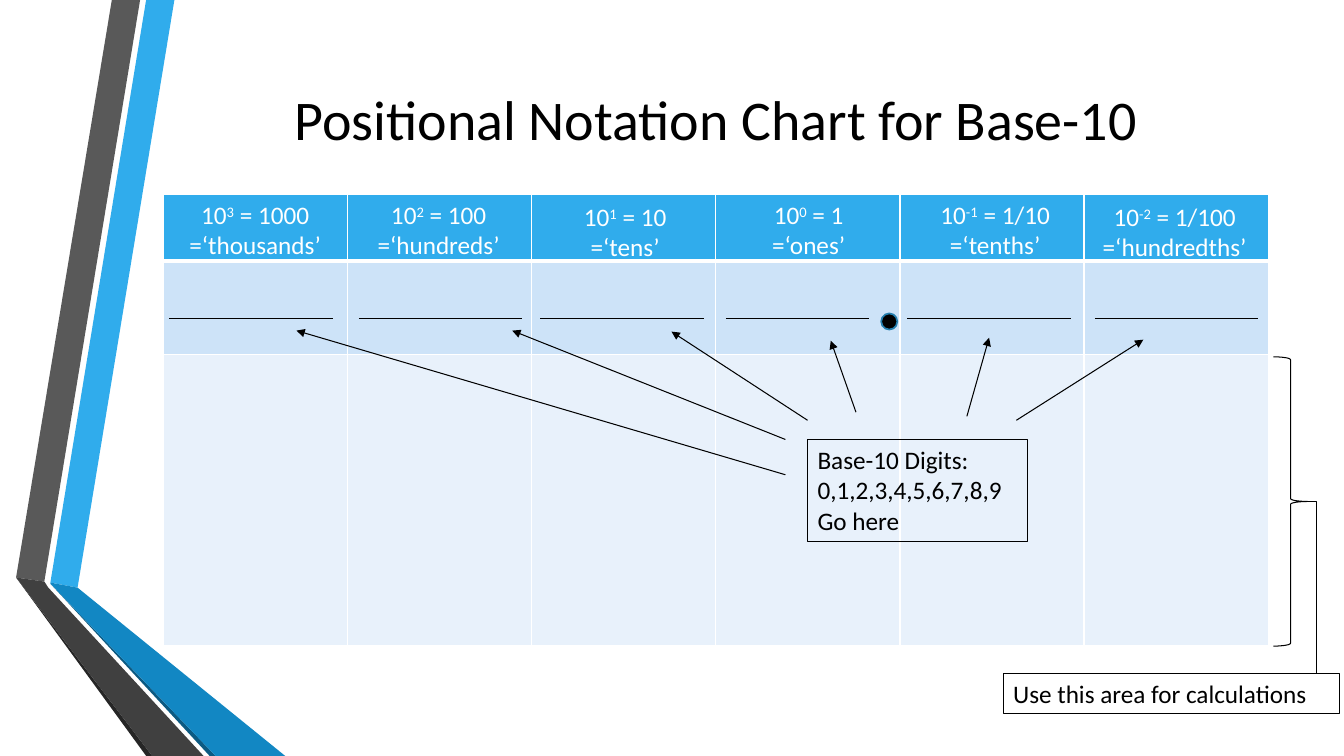
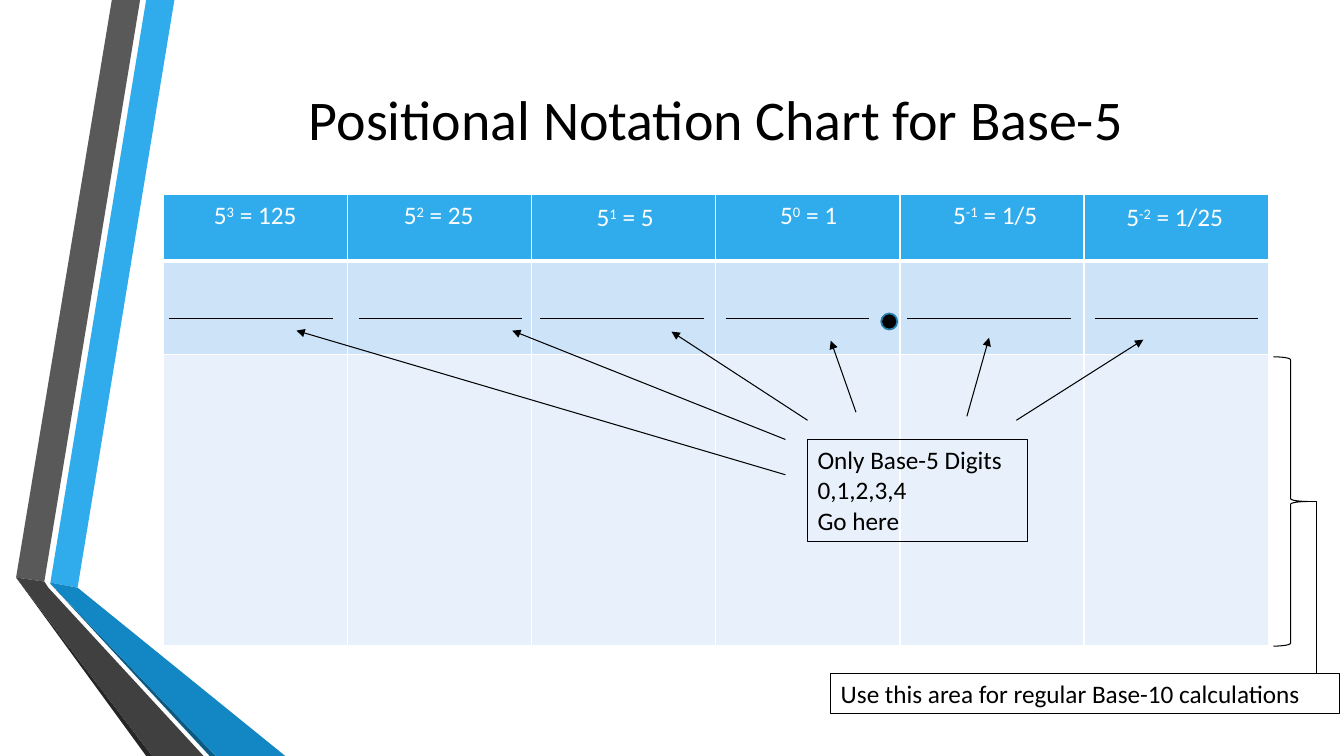
from dataclasses import dataclass
from typing import NamedTuple

from lxml import etree
from pptx import Presentation
from pptx.dml.color import RGBColor
from pptx.enum.shapes import MSO_CONNECTOR, MSO_SHAPE
from pptx.enum.text import MSO_ANCHOR, PP_ALIGN
from pptx.oxml.ns import qn
from pptx.util import Inches, Pt

STRAIGHT, ELBOW = MSO_CONNECTOR.STRAIGHT, MSO_CONNECTOR.ELBOW
OVAL, BRACE = MSO_SHAPE.OVAL, MSO_SHAPE.RIGHT_BRACE
TOP, MIDDLE = MSO_ANCHOR.TOP, MSO_ANCHOR.MIDDLE
LEFT, CENTER = PP_ALIGN.LEFT, PP_ALIGN.CENTER

Point = tuple[float, float]
Box = tuple[float, float, float, float]


@dataclass(frozen=True)
class Theme:
    font: str = "Calibri"
    title: float = 40
    body: float = 18
    thin: float = 0.75
    rim: float = 1.25
    ink: str = "000000"
    white: str = "FFFFFF"
    dot: str = "247FAF"
    rows: tuple[str, ...] = ("30ACEC", "CDE3F8", "E8F1FB")


class Band(NamedTuple):
    color: str
    points: list[Point]


class Slot(NamedTuple):
    """One column: place of its label, its blank line and its arrow."""
    label: Point
    blank: float
    width: float
    start: Point
    tip: Point


class Chart(NamedTuple):
    base: int
    names: list[str]
    digits: list[str]
    note: str
    note_box: Box


THEME = Theme()
BANDS = [
    Band("30ACEC", [(0.5, 5.78), (0.77, 5.83), (1.73, 0), (1.45, 0)]),
    Band("595959", [(1.39, 0), (1.11, 0), (0.16, 5.73), (0.44, 5.77)]),
    Band("262626", [(0.16, 5.73), (1.45, 7.5), (1.51, 7.5)]),
    Band("0C5A82", [(0.5, 5.79), (2.08, 7.5), (2.14, 7.5)]),
    Band("1287C3", [(0.5, 5.79), (2.14, 7.5), (2.83, 7.5), (0.77, 5.83), (0.5, 5.78)]),
    Band("404040", [(2.02, 7.5), (0.48, 5.83), (0.44, 5.77), (0.16, 5.73), (1.51, 7.5)]),
]
SLOTS = [
    Slot((1.62, 1.93), 1.68, 1.62, (7.79, 4.71), (2.94, 3.28)),
    Slot((3.44, 1.93), 3.56, 1.62, (7.79, 4.36), (5.08, 3.28)),
    Slot((5.29, 1.95), 5.36, 1.62, (8.01, 4.17), (6.66, 3.29)),
    Slot((7.11, 1.93), 7.2, 1.42, (8.49, 4.09), (8.24, 3.38)),
    Slot((8.96, 1.93), 9, 1.62, (9.59, 4.13), (9.81, 3.35)),
    Slot((10.74, 1.95), 10.86, 1.62, (10.08, 4.17), (11.34, 3.37)),
]
HEIGHTS = (0.66, 0.93, 2.89)
GRID = (1.62, 1.93, 10.96, sum(HEIGHTS))
BLANK_Y = 3.16
CHARTS = [
    Chart(10, ["thousands", "hundreds", "tens", "ones", "tenths", "hundredths"],
          ["Base-10 Digits:", "0,1,2,3,4,5,6,7,8,9", "Go here"],
          "Use this area for calculations", (9.95, 6.68, 3.34, 0.4)),
    Chart(5, [], ["Only Base-5 Digits", "0,1,2,3,4", "Go here"],
          "Use this area for regular Base-10 calculations", (8.24, 6.68, 5.05, 0.4)),
]


def rgb(color: str) -> RGBColor:
    return RGBColor.from_string(color)


def inches(values) -> list[int]:
    return [Inches(value) for value in values]


def stroke(line, color: str = THEME.ink, width: float = THEME.thin) -> None:
    line.color.rgb = rgb(color)
    line.width = Pt(width)


def add_text(slide, box: Box, lines: list[str], *, size: float = THEME.body,
             color: str = THEME.ink, align=LEFT, anchor=TOP, frame: bool = False) -> None:
    """Write one paragraph per line; text between two ^ signs is raised."""
    shape = slide.shapes.add_textbox(*inches(box))
    if frame:
        stroke(shape.line)
    body = shape.text_frame
    body.word_wrap = True
    body.vertical_anchor = anchor
    for i, line in enumerate(lines):
        para = body.paragraphs[0] if i == 0 else body.add_paragraph()
        para.alignment = align
        for j, part in enumerate(line.split("^")):
            run = para.add_run()
            run.text = part
            run.font.name = THEME.font
            run.font.size = Pt(size)
            run.font.color.rgb = rgb(color)
            if j % 2:
                run.font._element.set("baseline", "30000")


def add_line(slide, start: Point, end: Point, *, kind=STRAIGHT, arrow: bool = False):
    link = slide.shapes.add_connector(kind, *inches(start + end))
    stroke(link.line)
    if arrow:
        etree.SubElement(link.line._get_or_add_ln(), qn("a:tailEnd"), type="triangle")
    etree.SubElement(link.element.spPr, qn("a:effectLst"))
    return link


def add_bands(slide) -> None:
    for band in BANDS:
        first, *rest = [tuple(inches(point)) for point in band.points]
        path = slide.shapes.build_freeform(*first)
        path.add_line_segments(rest, close=True)
        shape = path.convert_to_shape()
        shape.shadow.inherit = False
        shape.fill.solid()
        shape.fill.fore_color.rgb = rgb(band.color)
        shape.line.fill.background()


def add_edge(cell, side: str, width: float) -> None:
    edge = etree.SubElement(cell._tc.get_or_add_tcPr(), qn(f"a:ln{side}"), w=str(Pt(width)))
    fill = etree.SubElement(edge, qn("a:solidFill"))
    etree.SubElement(fill, qn("a:srgbClr"), val=THEME.white)


def add_grid(slide) -> None:
    table = slide.shapes.add_table(len(HEIGHTS), len(SLOTS), *inches(GRID)).table
    for col in table.columns:
        col.width = Inches(GRID[2] / len(SLOTS))
    for i, (height, color) in enumerate(zip(HEIGHTS, THEME.rows)):
        table.rows[i].height = Inches(height)
        edges = {"L": 1, "R": 1, "T": 3 if i == 1 else 1, "B": 3 if i == 0 else 1}
        for cell in table.rows[i].cells:
            for side, width in edges.items():
                add_edge(cell, side, width)
            cell.fill.solid()
            cell.fill.fore_color.rgb = rgb(color)


def add_dot(slide) -> None:
    dot = slide.shapes.add_shape(OVAL, *inches((8.74, 3.11, 0.16, 0.16)))
    dot.shadow.inherit = False
    dot.fill.solid()
    dot.fill.fore_color.rgb = rgb(THEME.ink)
    stroke(dot.line, THEME.dot, THEME.rim)


def add_labels(slide, chart: Chart) -> None:
    for i, slot in enumerate(SLOTS):
        power = 3 - i
        value = chart.base ** abs(power)
        lines = [f"{chart.base}^{power}^ = {value if power >= 0 else f'1/{value}'}"]
        lines += [f"=‘{name}’" for name in chart.names[i:i + 1]]
        add_text(slide, (*slot.label, 1.82, 0.1 + 0.3 * len(lines)), lines,
                 color=THEME.white, align=CENTER)


def add_note(slide, chart: Chart) -> None:
    """Mark the work area with a brace that is tied to a framed note."""
    brace = slide.shapes.add_shape(BRACE, *inches((12.63, 3.54, 0.34, 2.87)))
    brace.shadow.inherit = False
    brace.fill.background()
    stroke(brace.line)
    add_text(slide, chart.note_box, [chart.note], frame=True)
    link = add_line(slide, (12.97, 4.98), (13.06, 6.68), kind=ELBOW)
    link.element.spPr.find(qn("a:prstGeom")).set("prst", "bentConnector2")


def add_chart_slide(deck, chart: Chart) -> None:
    slide = deck.slides.add_slide(deck.slide_layouts[6])
    add_bands(slide)
    add_text(slide, (1.62, 0.75, 10.96, 0.84),
             [f"Positional Notation Chart for Base-{chart.base}"],
             size=THEME.title, align=CENTER, anchor=MIDDLE)
    add_grid(slide)
    add_dot(slide)
    add_labels(slide, chart)
    add_text(slide, (8.01, 4.36, 2.18, 1.01), chart.digits, frame=True)
    for slot in SLOTS:
        add_line(slide, (slot.blank, BLANK_Y), (slot.blank + slot.width, BLANK_Y))
        add_line(slide, slot.start, slot.tip, arrow=True)
    add_note(slide, chart)


def main() -> None:
    deck = Presentation()
    deck.slide_width, deck.slide_height = Inches(13.33), Inches(7.5)
    for chart in CHARTS:
        add_chart_slide(deck, chart)
    deck.save("out.pptx")


if __name__ == "__main__":
    main()
